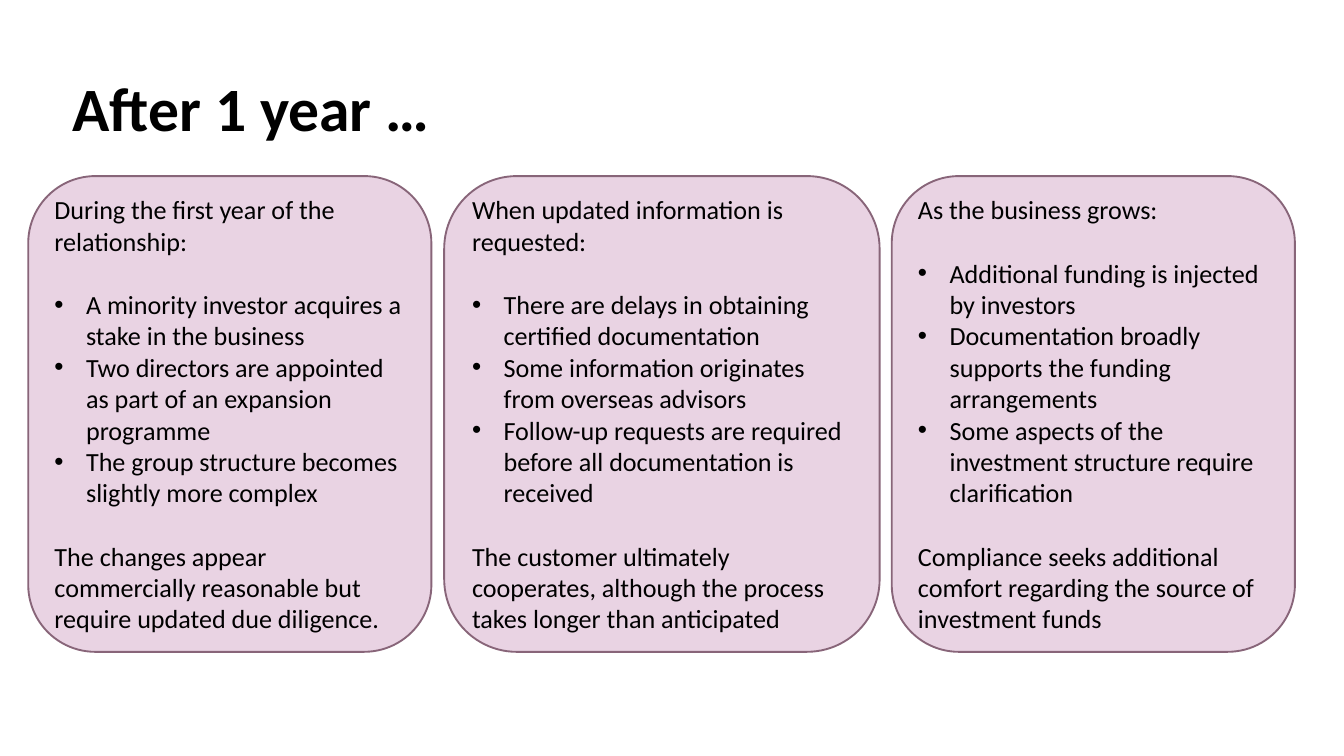
from lxml import etree
from pptx import Presentation
from pptx.dml.color import RGBColor
from pptx.enum import shapes, text
from pptx.oxml.ns import qn
from pptx.util import Pt

BLACK = RGBColor(0x00, 0x00, 0x00)
PINK = RGBColor(0xE9, 0xD3, 0xE3)
PLUM = RGBColor(0x88, 0x65, 0x79)
GAP = Pt(34.2)
INDENT = Pt(33.84)

CARDS = [
    (30.24, 432, "During the first year of the relationship:",
     ["A minority investor acquires a stake in the business",
      "Two directors are appointed as part of an expansion programme",
      "The group structure becomes slightly more complex"],
     "The changes appear commercially reasonable but require updated due diligence."),
    (475.92, 466.56, "When updated information is requested:",
     ["There are delays in obtaining certified documentation",
      "Some information originates from overseas advisors",
      "Follow-up requests are required before all documentation is received"],
     "The customer ultimately cooperates, although the process takes longer than anticipated"),
    (955.44, 432, "As the business grows:",
     ["Additional funding is injected by investors",
      "Documentation broadly supports the funding arrangements",
      "Some aspects of the investment structure require clarification"],
     "Compliance seeks additional comfort regarding the source of investment funds"),
]


def style(para, size, bold):
    para.alignment = text.PP_ALIGN.LEFT
    font = para.font
    font.name = "Calibri"
    font.size = Pt(size)
    font.bold = bold
    font.color.rgb = BLACK


def bullet(para):
    props = para._p.get_or_add_pPr()
    props.set("marL", str(INDENT))
    props.set("indent", str(-INDENT))
    etree.SubElement(props, qn("a:buFont")).set("typeface", "Arial")
    etree.SubElement(props, qn("a:buChar")).set("char", "•")


deck = Presentation()
deck.slide_width = Pt(1440)
deck.slide_height = Pt(810)
slide = deck.slides.add_slide(deck.slide_layouts[5])

title = slide.shapes.title
title.left, title.top, title.width, title.height = Pt(70.56), Pt(71.28), Pt(409), Pt(87.12)
frame = title.text_frame
frame.text = "After 1 year …"
frame.word_wrap = False
frame.auto_size = text.MSO_AUTO_SIZE.NONE
frame.vertical_anchor = text.MSO_ANCHOR.TOP
style(frame.paragraphs[0], 66, True)

for left, width, head, points, close in CARDS:
    card = slide.shapes.add_shape(
        shapes.MSO_SHAPE.ROUNDED_RECTANGLE, Pt(left), Pt(188.64), Pt(width), Pt(509.76))
    card.shadow.inherit = False
    card.fill.solid()
    card.fill.fore_color.rgb = PINK
    card.line.color.rgb = PLUM
    card.line.width = Pt(2)
    frame = card.text_frame
    frame.word_wrap = True
    frame.vertical_anchor = text.MSO_ANCHOR.MIDDLE
    frame.text = "\n".join([head, *points, close])
    first, *items, last = frame.paragraphs
    for item in items:
        bullet(item)
    for para in frame.paragraphs:
        style(para, 28, para is first)
    items[0].space_before = GAP
    last.space_before = GAP

deck.save("out.pptx")
